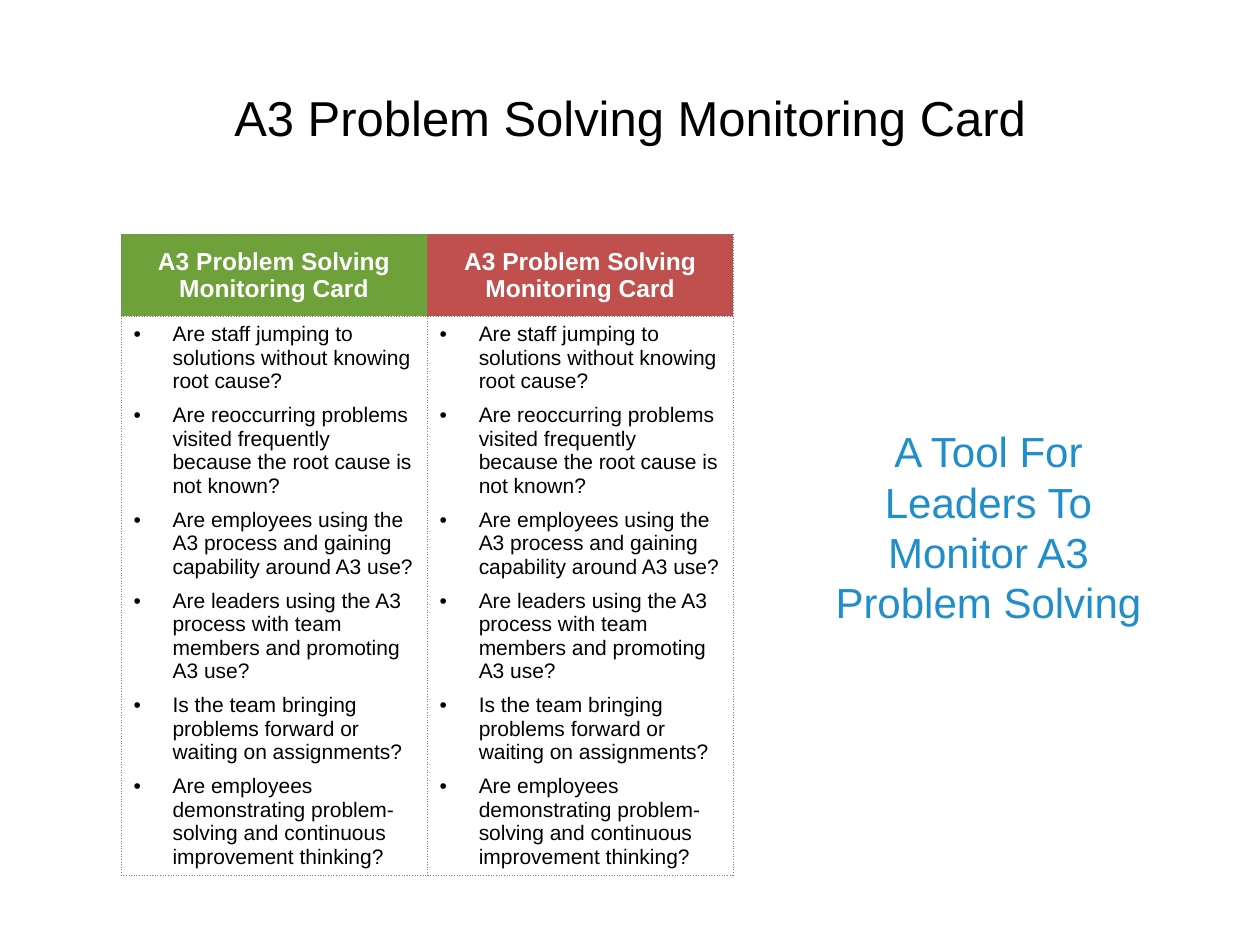
from dataclasses import dataclass

from lxml import etree
from pptx import Presentation
from pptx.dml.color import RGBColor
from pptx.enum.text import MSO_ANCHOR, PP_ALIGN
from pptx.oxml.ns import qn
from pptx.util import Inches, Pt

CENTER = PP_ALIGN.CENTER
LEFT = PP_ALIGN.LEFT
MIDDLE = MSO_ANCHOR.MIDDLE

FONT = "Arial"
TITLE_ONLY = 5
COLORS = {
    "text": "000000",
    "header_text": "FFFFFF",
    "green": "6EA139",
    "red": "C0504D",
    "border": "7F7F7F",
    "blue": "208ECB",
}
QUESTIONS = [
    "Are staff jumping to solutions without knowing root cause?",
    "Are reoccurring problems visited frequently because the root cause is not known?",
    "Are employees using the A3 process and gaining capability around A3 use?",
    "Are leaders using the A3 process with team members and promoting A3 use?",
    "Is the team bringing problems forward or waiting on assignments?",
    "Are employees demonstrating problem-solving and continuous improvement thinking?",
]


@dataclass
class Card:
    heading: str
    color: str
    questions: list[str]


CARDS = [
    Card("A3 Problem Solving\nMonitoring Card", color, QUESTIONS)
    for color in ("green", "red")
]


def write(paragraph, text: str, size: float, color: str, align, bold: bool = False) -> None:
    paragraph.text = text
    paragraph.alignment = align
    for run in paragraph.runs:
        run.font.name = FONT
        run.font.size = Pt(size)
        run.font.bold = bold
        run.font.color.rgb = RGBColor.from_string(COLORS[color])
    # Line breaks carry the size of the text around them
    for line_break in paragraph._p.findall(qn("a:br")):
        etree.SubElement(line_break, qn("a:rPr"), sz=str(size * 100))


def add_bullet(paragraph, indent: float) -> None:
    properties = paragraph._p.get_or_add_pPr()
    properties.set("marL", str(Inches(indent)))
    properties.set("indent", str(-Inches(indent)))
    etree.SubElement(properties, qn("a:buFont"), typeface=FONT)
    etree.SubElement(properties, qn("a:buChar"), char="•")


def add_borders(cell) -> None:
    properties = cell._tc.get_or_add_tcPr()
    for side in ("lnL", "lnR", "lnT", "lnB"):
        line = etree.SubElement(properties, qn(f"a:{side}"), w=str(Pt(0.25)))
        fill = etree.SubElement(line, qn("a:solidFill"))
        etree.SubElement(fill, qn("a:srgbClr"), val=COLORS["border"])
        etree.SubElement(line, qn("a:prstDash"), val="sysDot")


def fill_header(cell, card: Card) -> None:
    add_borders(cell)
    cell.fill.solid()
    cell.fill.fore_color.rgb = RGBColor.from_string(COLORS[card.color])
    cell.vertical_anchor = MIDDLE
    write(cell.text_frame.paragraphs[0], card.heading, 14, "header_text", CENTER, bold=True)


def fill_questions(cell, card: Card) -> None:
    add_borders(cell)
    cell.fill.background()
    frame = cell.text_frame
    for index, question in enumerate(card.questions):
        paragraph = frame.add_paragraph() if index else frame.paragraphs[0]
        add_bullet(paragraph, 0.31)
        paragraph.space_after = Pt(6)
        write(paragraph, question, 12, "text", LEFT)


def add_cards(slide, cards: list[Card]) -> None:
    column_width = Inches(2.43)
    row_heights = [Inches(0.65), Inches(4.34)]
    table = slide.shapes.add_table(
        len(row_heights), len(cards), Inches(0.96), Inches(1.86),
        column_width * len(cards), sum(row_heights),
    ).table
    for row, height in zip(table.rows, row_heights):
        row.height = height
    for index, card in enumerate(cards):
        table.columns[index].width = column_width
        fill_header(table.cell(0, index), card)
        fill_questions(table.cell(1, index), card)


def main() -> None:
    presentation = Presentation()
    presentation.slide_width = Inches(10)
    presentation.slide_height = Inches(7.5)
    slide = presentation.slides.add_slide(presentation.slide_layouts[TITLE_ONLY])

    # Title
    title = slide.shapes.title
    title.left, title.top = Inches(0.5), Inches(0.3)
    title.width, title.height = Inches(9), Inches(1.25)
    title.text_frame.vertical_anchor = MIDDLE
    write(title.text_frame.paragraphs[0], "A3 Problem Solving Monitoring Card", 28, "text", CENTER)

    # Pair of monitoring cards
    add_cards(slide, CARDS)

    # Purpose beside the cards
    purpose = slide.shapes.add_textbox(Inches(6.48), Inches(3.33), Inches(2.73), Inches(1.72))
    purpose.text_frame.word_wrap = True
    write(
        purpose.text_frame.paragraphs[0],
        "A Tool For Leaders To Monitor A3 Problem Solving", 24, "blue", CENTER,
    )

    presentation.save("out.pptx")


if __name__ == "__main__":
    main()
